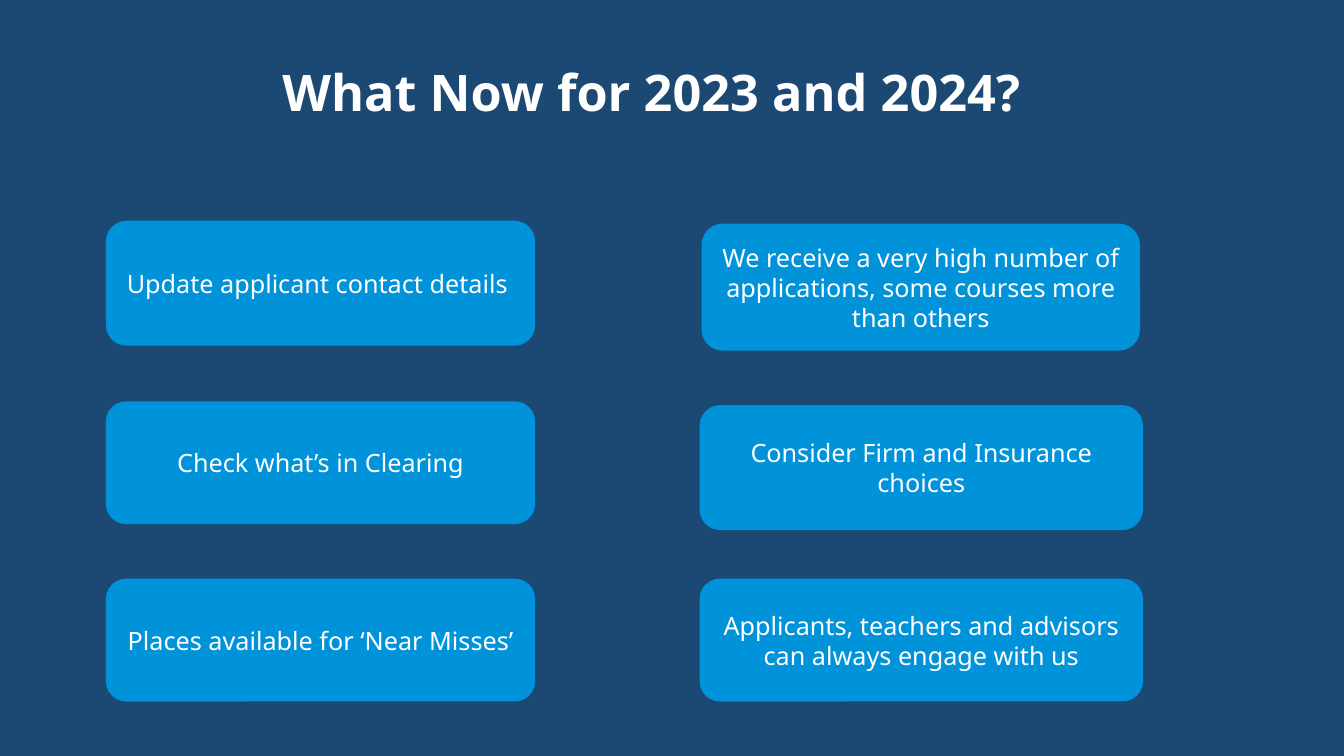
from pptx import Presentation
from pptx.dml.color import RGBColor
from pptx.enum.shapes import MSO_SHAPE
from pptx.enum.text import MSO_ANCHOR, PP_ALIGN
from pptx.util import Pt

NAVY = RGBColor(0x1B, 0x49, 0x74)
BLUE = RGBColor(0x00, 0x93, 0xDA)
WHITE = RGBColor(0xFF, 0xFF, 0xFF)
CARD = MSO_SHAPE.FLOWCHART_ALTERNATE_PROCESS
MIDDLE = MSO_ANCHOR.MIDDLE
CENTER = PP_ALIGN.CENTER


def write(frame, text, size=18, bold=False, line_spacing=None):
    frame.word_wrap = True
    frame.vertical_anchor = MIDDLE
    paragraph = frame.paragraphs[0]
    paragraph.alignment = CENTER
    paragraph.line_spacing = line_spacing
    run = paragraph.add_run()
    run.text = text
    run.font.name = "Noto Sans"
    run.font.size = Pt(size)
    run.font.bold = bold
    run.font.color.rgb = WHITE


deck = Presentation()
deck.slide_width = Pt(960)
deck.slide_height = Pt(540)
slide = deck.slides.add_slide(deck.slide_layouts[6])
slide.background.fill.solid()
slide.background.fill.fore_color.rgb = NAVY

title = slide.shapes.add_textbox(Pt(184.3), Pt(38.9), Pt(568.8), Pt(61.2))
title.text_frame.margin_left = 0
write(title.text_frame, "What Now for 2023 and 2024?", size=36, bold=True, line_spacing=0.8)

steps = [
    ("Update applicant contact details ", 75.6, 157.7, 306.7, 89.3),
    ("Check what’s in Clearing", 75.6, 286.6, 306.7, 87.8),
    ("Places available for ‘Near Misses’", 75.6, 413.3, 306.7, 87.8),
    ("We receive a very high number of applications, some courses more than others",
     501.1, 159.8, 313.2, 90.7),
    ("Consider Firm and Insurance choices", 499.7, 289.4, 316.8, 89.3),
    ("Applicants, teachers and advisors can always engage with us",
     499.7, 413.3, 316.8, 87.8),
]
for text, left, top, width, height in steps:
    step = slide.shapes.add_shape(CARD, Pt(left), Pt(top), Pt(width), Pt(height))
    step.shadow.inherit = False
    step.fill.solid()
    step.fill.fore_color.rgb = BLUE
    step.line.fill.background()
    write(step.text_frame, text)

deck.save("out.pptx")
